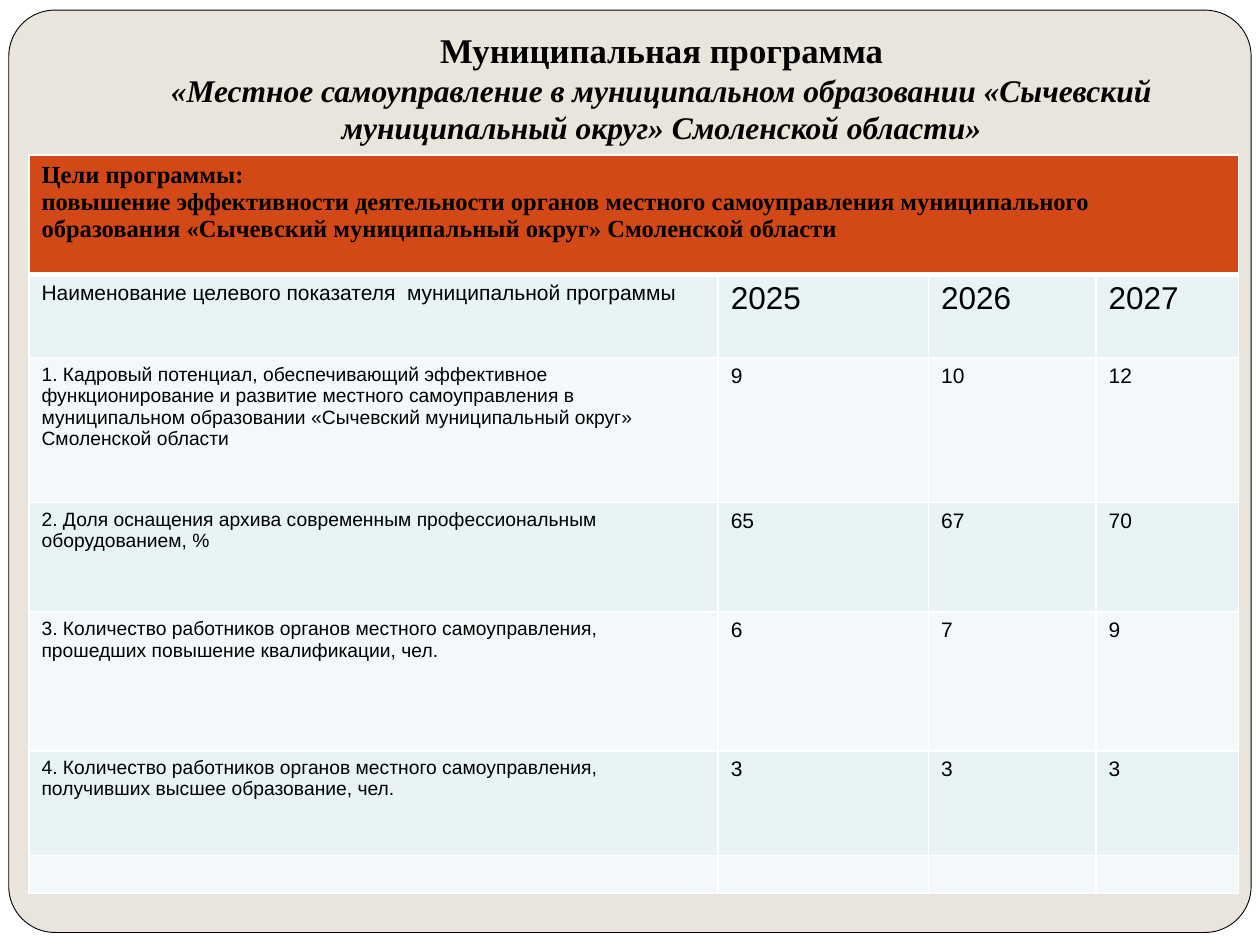
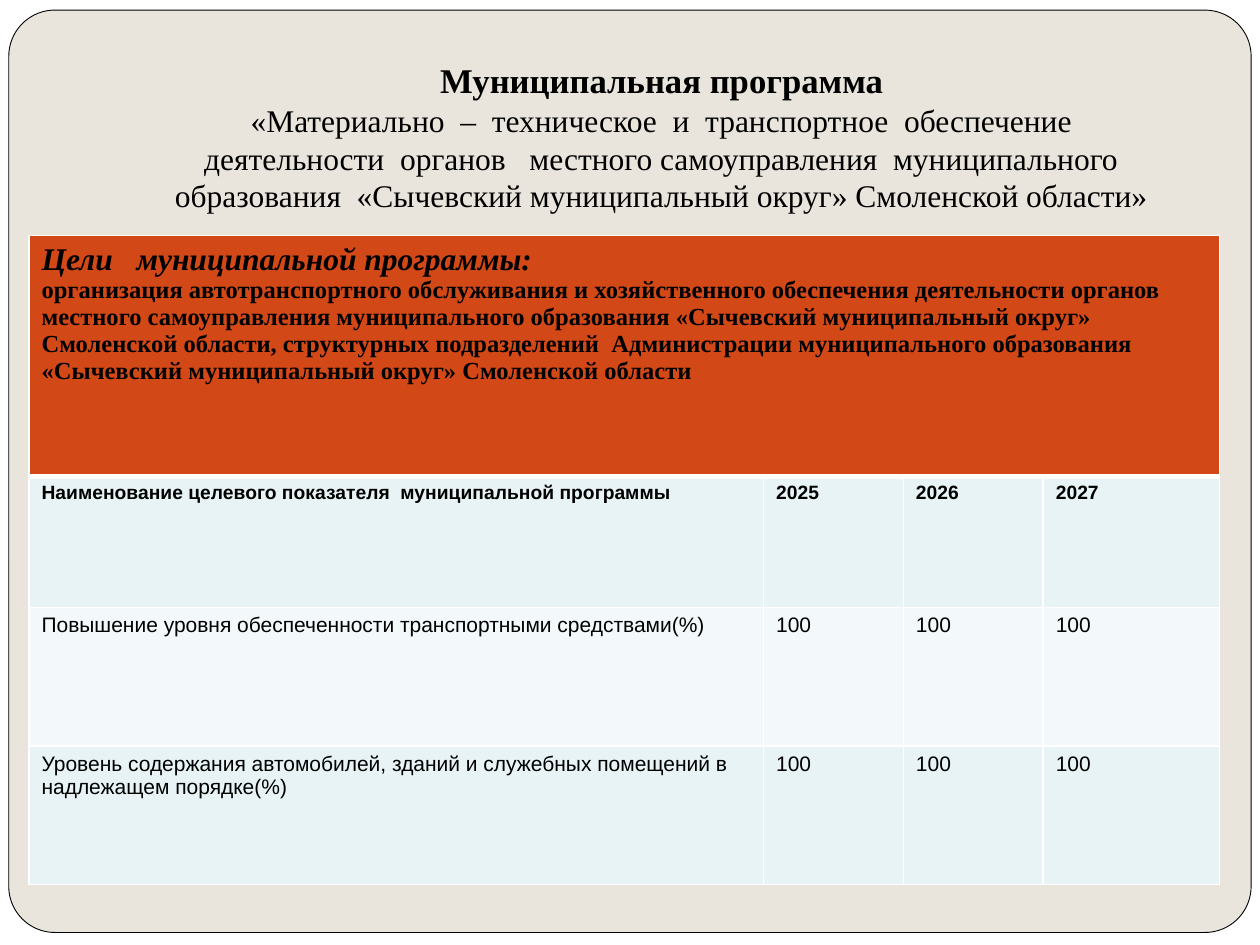
from dataclasses import dataclass

from lxml import etree
from pptx import Presentation
from pptx.dml.color import RGBColor
from pptx.enum.shapes import MSO_SHAPE
from pptx.enum.text import MSO_ANCHOR, MSO_AUTO_SIZE, PP_ALIGN
from pptx.oxml.ns import qn
from pptx.util import Emu, Inches, Pt

ROUNDED = MSO_SHAPE.ROUNDED_RECTANGLE
BOTTOM = MSO_ANCHOR.BOTTOM
NO_AUTOFIT = MSO_AUTO_SIZE.NONE
LEFT, CENTER = PP_ALIGN.LEFT, PP_ALIGN.CENTER

BLACK = RGBColor(0x00, 0x00, 0x00)
WHITE = RGBColor(0xFF, 0xFF, 0xFF)
SAND = RGBColor(0xE9, 0xE5, 0xDC)
ORANGE = RGBColor(0xD3, 0x48, 0x17)
BANDS = (RGBColor(0xE7, 0xF3, 0xF4), RGBColor(0xF3, 0xF9, 0xFA))

SERIF, SANS = "Times New Roman", "Arial"
SLIDE_WIDTH, SLIDE_HEIGHT = Inches(10), Inches(7.5)
TITLE_ONLY = 5
THIN, THICK = 1, 3
YEARS = ("2025", "2026", "2027")
INDICATOR_HEADING = "Наименование целевого показателя  муниципальной программы"


@dataclass(frozen=True)
class Line:
    text: str
    size: float
    bold: bool = False
    italic: bool = False
    font: str = SANS


@dataclass(frozen=True)
class Indicator:
    name: str
    values: tuple[str, ...]
    height: float  # percent of the slide height
    name_size: float = 12
    value_size: float = 12
    bold: bool = False


@dataclass(frozen=True)
class Programme:
    title: list[Line]
    title_height: float
    title_bottom_inset: float
    goals: list[Line]
    goals_height: float
    table_top: float
    columns: tuple[float, ...]  # percent of the slide width
    indicators: list[Indicator]


def across(percent: float) -> Emu:
    return Emu(round(SLIDE_WIDTH * percent / 100))


def down(percent: float) -> Emu:
    return Emu(round(SLIDE_HEIGHT * percent / 100))


def write(paragraph, text: str, *, size: float, bold: bool = False,
          italic: bool = False, font: str = SANS, align=LEFT) -> None:
    paragraph.alignment = align
    if not text:
        # An empty cell still needs a text size to keep its row low
        etree.SubElement(paragraph._p, qn("a:endParaRPr"), sz=str(int(size * 100)))
        return
    run = paragraph.add_run()
    run.text = text
    run.font.size, run.font.name = Pt(size), font
    run.font.bold, run.font.italic = bold, italic
    run.font.color.rgb = BLACK


def write_lines(frame, lines: list[Line], align=LEFT) -> None:
    for index, line in enumerate(lines):
        paragraph = frame.add_paragraph() if index else frame.paragraphs[0]
        write(paragraph, line.text, size=line.size, bold=line.bold,
              italic=line.italic, font=line.font, align=align)


def paint_cell(cell, color: RGBColor, top: float, bottom: float) -> None:
    cell.fill.solid()
    cell.fill.fore_color.rgb = color
    properties = cell._tc.get_or_add_tcPr()
    sides = {"a:lnL": THIN, "a:lnR": THIN, "a:lnT": top, "a:lnB": bottom}
    for position, (side, width) in enumerate(sides.items()):
        border = etree.Element(qn(side), w=str(Pt(width)))
        paint = etree.SubElement(border, qn("a:solidFill"))
        etree.SubElement(paint, qn("a:srgbClr"), val=str(WHITE))
        properties.insert(position, border)


def add_backdrop(slide) -> None:
    """White page with a rounded sand panel behind everything."""
    slide.background.fill.solid()
    slide.background.fill.fore_color.rgb = WHITE
    panel = slide.shapes.add_shape(ROUNDED, across(0.7), down(1.07),
                                   across(98.6), down(97.6))
    panel.adjustments[0] = 0.05
    panel.shadow.inherit = False
    panel.fill.solid()
    panel.fill.fore_color.rgb = SAND
    panel.line.color.rgb = BLACK
    panel.line.width = Pt(0.5)
    slide.shapes.title.element.addprevious(panel.element)


def add_title(slide, programme: Programme) -> None:
    title = slide.shapes.title
    title.left, title.top = across(10), down(4)
    title.width, title.height = across(85), down(programme.title_height)
    frame = title.text_frame
    frame.word_wrap, frame.auto_size = True, NO_AUTOFIT
    frame.vertical_anchor = BOTTOM
    frame.margin_left = frame.margin_right = Inches(0.1)
    frame.margin_top = 0
    frame.margin_bottom = Inches(programme.title_bottom_inset)
    write_lines(frame, programme.title, CENTER)


def add_indicator_table(slide, programme: Programme) -> None:
    heights = [programme.goals_height] + [i.height for i in programme.indicators]
    table = slide.shapes.add_table(
        len(heights), len(programme.columns), across(2.3), down(programme.table_top),
        across(sum(programme.columns)), down(sum(heights))).table
    table.horz_banding = False
    for column, width in zip(table.columns, programme.columns):
        column.width = across(width)
    for row, height in zip(table.rows, heights):
        row.height = down(height)

    # Goals band over the full width
    goals = table.cell(0, 0)
    goals.merge(table.cell(0, len(programme.columns) - 1))
    for cell in table.rows[0].cells:
        paint_cell(cell, ORANGE, THIN, THICK)
    write_lines(goals.text_frame, programme.goals)

    # Indicators by year
    for index, indicator in enumerate(programme.indicators):
        texts = (indicator.name, *indicator.values)
        for column, (cell, text) in enumerate(zip(table.rows[index + 1].cells, texts)):
            paint_cell(cell, BANDS[index % 2], THIN if index else THICK, THIN)
            write(cell.text_frame.paragraphs[0], text, bold=indicator.bold,
                  size=indicator.value_size if column else indicator.name_size)


SELF_GOVERNMENT = Programme(
    title=[
        Line("Муниципальная программа", 19.8, bold=True, font=SERIF),
        Line("«Местное самоуправление в муниципальном образовании «Сычевский "
             "муниципальный округ» Смоленской области»", 18, True, True, SERIF),
    ],
    title_height=16.67,
    title_bottom_inset=0.39,
    goals=[
        Line("Цели программы:", 14, bold=True, font=SERIF),
        Line("повышение эффективности деятельности органов местного самоуправления "
             "муниципального образования «Сычевский муниципальный округ» "
             "Смоленской области", 14, bold=True, font=SERIF),
    ],
    goals_height=12.67,
    table_top=16.4,
    columns=(54.7, 16.7, 13.3, 11.3),
    indicators=[
        Indicator(INDICATOR_HEADING, YEARS, 8.8, value_size=18),
        Indicator("1. Кадровый потенциал, обеспечивающий эффективное функционирование "
                  "и развитие местного самоуправления в муниципальном образовании "
                  "«Сычевский муниципальный округ» Смоленской области",
                  ("9", "10", "12"), 15.33, name_size=11),
        Indicator("2. Доля оснащения архива современным профессиональным "
                  "оборудованием, %", ("65", "67", "70"), 11.6, name_size=11),
        Indicator("3. Количество работников органов местного самоуправления, "
                  "прошедших повышение квалификации, чел.",
                  ("6", "7", "9"), 14.67, name_size=11),
        Indicator("4. Количество работников органов местного самоуправления, "
                  "получивших высшее образование, чел.",
                  ("3", "3", "3"), 11.07, name_size=11),
        Indicator("", ("", "", ""), 3.83),
    ],
)

TRANSPORT_SUPPORT = Programme(
    title=[
        Line("Муниципальная программа", 19.8, bold=True, font=SERIF),
        Line("«Материально  –  техническое  и  транспортное  обеспечение", 18, font=SERIF),
        Line("деятельности  органов   местного самоуправления  муниципального",
             18, font=SERIF),
        Line("образования  «Сычевский муниципальный округ» Смоленской области»",
             18, font=SERIF),
    ],
    title_height=20,
    title_bottom_inset=0.1,
    goals=[
        Line("Цели   муниципальной программы:", 18, True, True, SERIF),
        Line("организация автотранспортного обслуживания и хозяйственного обеспечения "
             "деятельности органов местного самоуправления муниципального образования "
             "«Сычевский муниципальный округ» Смоленской области, структурных "
             "подразделений  Администрации муниципального образования «Сычевский "
             "муниципальный округ» Смоленской области", 14, bold=True, font=SERIF),
    ],
    goals_height=25.47,
    table_top=24.93,
    columns=(58.3, 11.1, 11.1, 14),
    indicators=[
        Indicator(INDICATOR_HEADING, YEARS, 13.87, 11, 11, bold=True),
        Indicator("Повышение уровня обеспеченности транспортными средствами(%)",
                  ("100",) * 3, 14.67),
        Indicator("Уровень содержания автомобилей, зданий и служебных помещений "
                  "в надлежащем порядке(%)", ("100",) * 3, 14.67),
    ],
)


def main() -> None:
    deck = Presentation()
    deck.slide_width, deck.slide_height = SLIDE_WIDTH, SLIDE_HEIGHT
    for programme in (SELF_GOVERNMENT, TRANSPORT_SUPPORT):
        slide = deck.slides.add_slide(deck.slide_layouts[TITLE_ONLY])
        add_backdrop(slide)
        add_title(slide, programme)
        add_indicator_table(slide, programme)
    deck.save("out.pptx")


if __name__ == "__main__":
    main()
